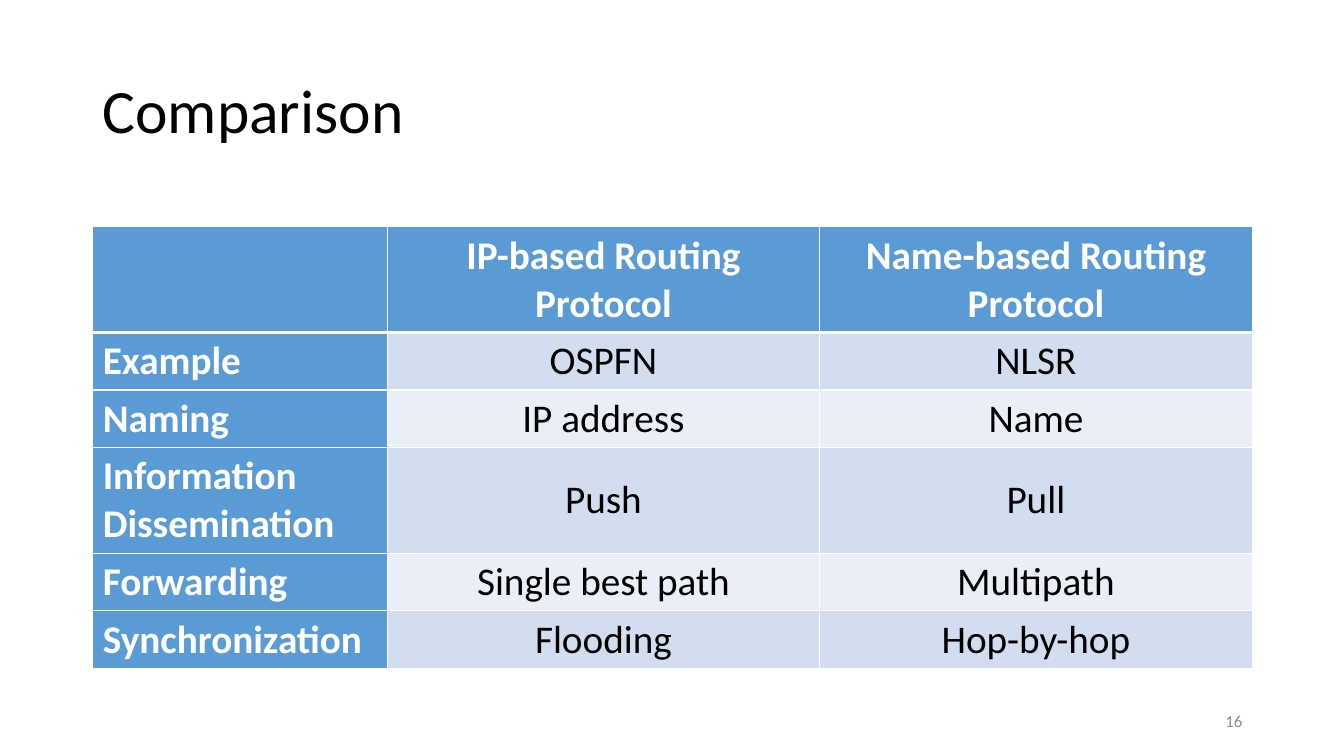
from dataclasses import dataclass

from lxml.etree import SubElement
from pptx import Presentation
from pptx.dml.color import RGBColor
from pptx.enum.text import MSO_ANCHOR, PP_ALIGN
from pptx.oxml.ns import qn
from pptx.slide import Slide
from pptx.table import _Cell as Cell
from pptx.text.text import TextFrame
from pptx.util import Inches, Pt

FONT = "Calibri"
BLACK = RGBColor(0x00, 0x00, 0x00)
WHITE = RGBColor(0xFF, 0xFF, 0xFF)
GRAY = RGBColor(0x8C, 0x8C, 0x8C)
BLUE = RGBColor(0x5B, 0x9B, 0xD5)
BANDS = (RGBColor(0xD2, 0xDE, 0xEF), RGBColor(0xEA, 0xEF, 0xF7))

COLUMN_WIDTHS = (2.92, 4.29, 4.29)
SINGLE_LINE, DOUBLE_LINE = 0.57, 1.05


@dataclass(frozen=True)
class ComparisonRow:
    texts: tuple[str, str, str]
    height: float = SINGLE_LINE
    value_spacing: float = 1.0


ROWS = (
    ComparisonRow(("", "IP-based Routing Protocol", "Name-based Routing Protocol"), DOUBLE_LINE),
    ComparisonRow(("Example", "OSPFN", "NLSR")),
    ComparisonRow(("Naming", "IP address", "Name")),
    ComparisonRow(("Information Dissemination", "Push", "Pull"), DOUBLE_LINE, 1.5),
    ComparisonRow(("Forwarding", "Single best path", "Multipath")),
    ComparisonRow(("Synchronization", "Flooding", "Hop-by-hop")),
)


def write_text(frame: TextFrame, text: str, *, size: float, color: RGBColor,
               bold: bool = False, align: PP_ALIGN = PP_ALIGN.LEFT,
               spacing: float = 1.0) -> None:
    paragraph = frame.paragraphs[0]
    paragraph.alignment = align
    paragraph.line_spacing = spacing
    paragraph.font.size = Pt(size)
    if not text:
        return
    run = paragraph.add_run()
    run.text = text
    run.font.name = FONT
    run.font.size = Pt(size)
    run.font.bold = bold
    run.font.color.rgb = color


def add_text_box(slide: Slide, left: float, top: float, width: float,
                 height: float) -> TextFrame:
    box = slide.shapes.add_textbox(Inches(left), Inches(top), Inches(width), Inches(height))
    box.text_frame.word_wrap = True
    box.text_frame.vertical_anchor = MSO_ANCHOR.MIDDLE
    return box.text_frame


def set_borders(cell: Cell, top: float, bottom: float) -> None:
    properties = cell._tc.get_or_add_tcPr()
    for side, width in (("L", 1), ("R", 1), ("T", top), ("B", bottom)):
        line = SubElement(properties, qn(f"a:ln{side}"), w=str(Pt(width)))
        fill = SubElement(line, qn("a:solidFill"))
        SubElement(fill, qn("a:srgbClr"), val=str(WHITE))


def add_comparison_table(slide: Slide) -> None:
    height = sum(row.height for row in ROWS)
    table = slide.shapes.add_table(
        len(ROWS), len(COLUMN_WIDTHS), Inches(0.92), Inches(2.25),
        Inches(sum(COLUMN_WIDTHS)), Inches(height)).table
    table.first_col = True
    for column, width in zip(table.columns, COLUMN_WIDTHS):
        column.width = Inches(width)
    for row_index, row in enumerate(ROWS):
        table.rows[row_index].height = Inches(row.height)
        for column_index, text in enumerate(row.texts):
            cell = table.cell(row_index, column_index)
            is_label = column_index == 0
            is_heading = row_index == 0 or is_label
            # The rule under the header row is thicker than the others
            set_borders(cell, top=3 if row_index == 1 else 1,
                        bottom=3 if row_index == 0 else 1)
            cell.fill.solid()
            cell.fill.fore_color.rgb = BLUE if is_heading else BANDS[(row_index - 1) % 2]
            write_text(cell.text_frame, text, size=28,
                       color=WHITE if is_heading else BLACK, bold=is_heading,
                       align=PP_ALIGN.LEFT if is_label else PP_ALIGN.CENTER,
                       spacing=1.0 if is_label else row.value_spacing)


def main() -> None:
    presentation = Presentation()
    presentation.slide_width = Inches(13.33)
    presentation.slide_height = Inches(7.5)
    slide = presentation.slides.add_slide(presentation.slide_layouts[6])

    # Title
    write_text(add_text_box(slide, 0.92, 0.4, 11.5, 1.45), "Comparison",
               size=44, color=BLACK, spacing=0.9)
    # Table
    add_comparison_table(slide)
    # Slide number
    write_text(add_text_box(slide, 9.42, 6.95, 3, 0.4), "16",
               size=12, color=GRAY, align=PP_ALIGN.RIGHT)

    presentation.save("out.pptx")


if __name__ == "__main__":
    main()
